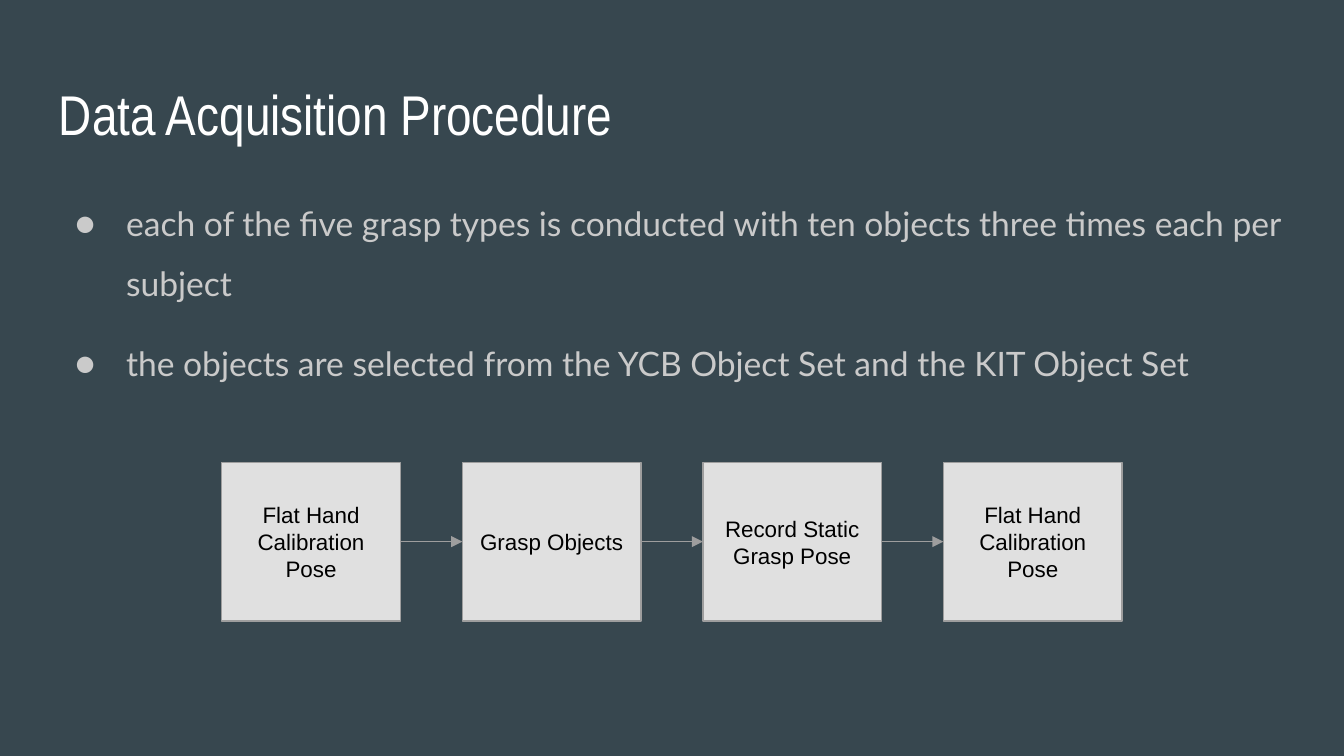
from lxml import etree
from pptx import Presentation
from pptx.dml.color import RGBColor
from pptx.enum.shapes import MSO_CONNECTOR as CONN, MSO_SHAPE as SHAPE
from pptx.enum.text import MSO_ANCHOR as ANCHOR, PP_ALIGN as ALIGN
from pptx.oxml.ns import qn
from pptx.util import Inches, Pt

TITLE = {"name": "Arial Narrow", "size": Pt(30)}
BODY = {"name": "Lato", "size": Pt(18)}
STEP = {"name": "Arial", "size": Pt(12)}
GREY = "9E9E9E"


def rgb(value):
    return RGBColor.from_string(value)


def write(tf, p, text, fmt, color):
    """Put text in paragraph p and format it, with even insets on its frame."""
    tf.word_wrap = True
    for side in ("left", "right", "top", "bottom"):
        setattr(tf, f"margin_{side}", Inches(0.1))
    r = p.add_run()
    r.text = text
    for key, value in fmt.items():
        setattr(r.font, key, value)
    r.font.color.rgb = rgb(color)


prs = Presentation()
prs.slide_width = Inches(10)
prs.slide_height = Inches(10) * 9 // 16
s = prs.slides.add_slide(prs.slide_layouts[6])
s.background.fill.solid()
s.background.fill.fore_color.rgb = rgb("37474F")

# Title
tf = s.shapes.add_textbox(Inches(0.34), Inches(0.49), Inches(9.32), Inches(0.63)).text_frame
write(tf, tf.paragraphs[0], "Data Acquisition Procedure", TITLE, "FFFFFF")

# Bullets
bullets = [
    "each of the five grasp types is conducted with ten objects three times each per subject",
    "the objects are selected from the YCB Object Set and the KIT Object Set",
]
tf = s.shapes.add_textbox(Inches(0.34), Inches(1.26), Inches(9.32), Inches(3.74)).text_frame
for i, text in enumerate(bullets):
    p = tf.add_paragraph() if i else tf.paragraphs[0]
    p.line_spacing = 1.5
    p.space_before = Pt(10 if i else 0)
    pPr = p._p.get_or_add_pPr()
    pPr.set("marL", str(Inches(0.5)))
    pPr.set("indent", str(Inches(-0.38)))
    color = etree.SubElement(pPr, qn("a:buClr"))
    etree.SubElement(color, qn("a:srgbClr"), val="CACACA")
    etree.SubElement(pPr, qn("a:buFont"), typeface="Lato")
    etree.SubElement(pPr, qn("a:buChar"), char="●")
    write(tf, p, text, BODY, "CACACA")

# Procedure steps
steps = [
    "Flat Hand Calibration Pose",
    "Grasp Objects",
    "Record Static Grasp Pose",
    "Flat Hand Calibration Pose",
]
boxes = []
for i, text in enumerate(steps):
    sp = s.shapes.add_shape(SHAPE.RECTANGLE, Inches(1.65 + 1.79 * i), Inches(3.44),
                            Inches(1.33), Inches(1.18))
    sp.shadow.inherit = False
    sp.fill.solid()
    sp.fill.fore_color.rgb = rgb("E0E0E0")
    sp.line.color.rgb = rgb(GREY)
    sp.line.width = Pt(0.75)
    tf = sp.text_frame
    tf.vertical_anchor = ANCHOR.MIDDLE
    tf.paragraphs[0].alignment = ALIGN.CENTER
    write(tf, tf.paragraphs[0], text, STEP, "000000")
    boxes.append(sp)

# Arrows between neighbouring steps
for start, end in zip(boxes, boxes[1:]):
    arrow = s.shapes.add_connector(CONN.STRAIGHT, 0, 0, 0, 0)
    arrow.begin_connect(start, 3)
    arrow.end_connect(end, 1)
    arrow.line.color.rgb = rgb(GREY)
    arrow.line.width = Pt(0.75)
    etree.SubElement(arrow.line._get_or_add_ln(), qn("a:tailEnd"), type="triangle")
    etree.SubElement(arrow._element.spPr, qn("a:effectLst"))

prs.save("out.pptx")
